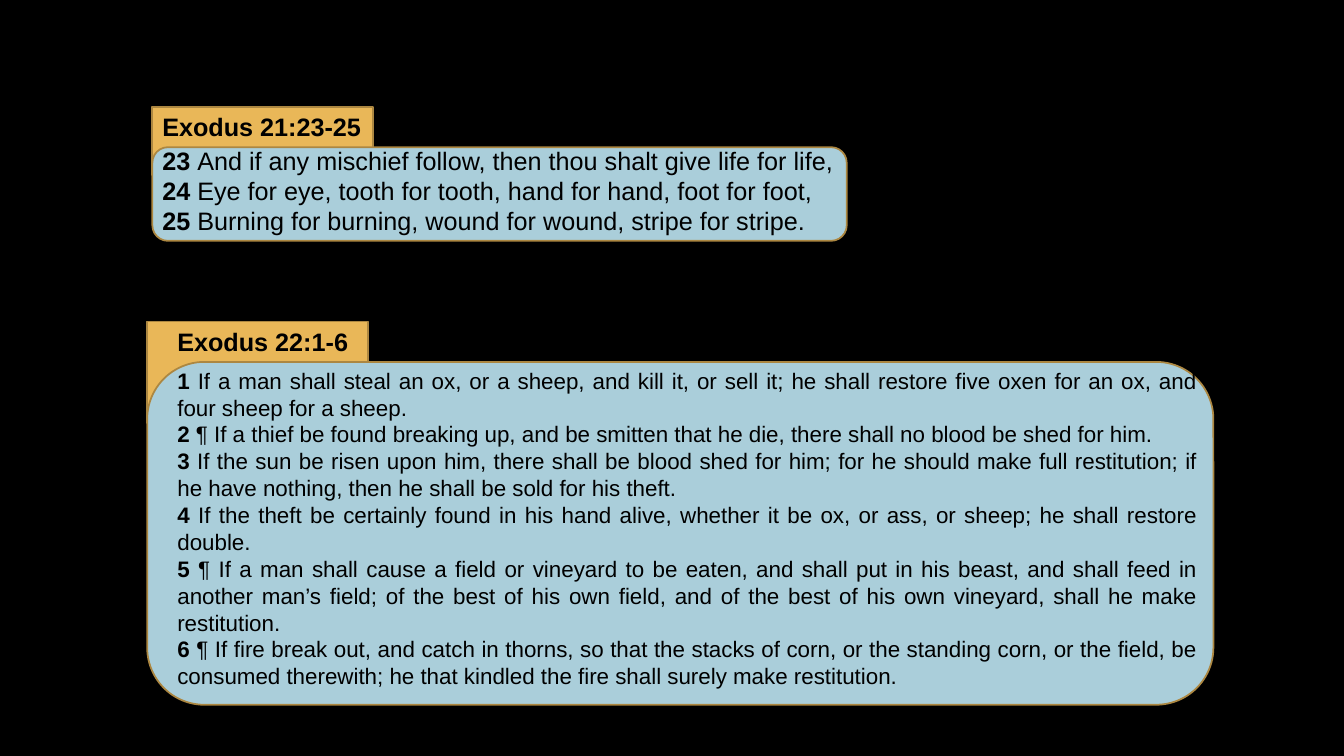
import pptx
import pptx.dml.color
import pptx.enum.shapes
import pptx.enum.text
import pptx.util

Cm = pptx.util.Cm
Pt = pptx.util.Pt
SHAPE = pptx.enum.shapes.MSO_SHAPE
ALIGN = pptx.enum.text.PP_ALIGN

COLOURS = {
    "background": "000000",
    "tab": "E9B758",
    "panel": "AACEDA",
    "outline": "AC8741",
    "text": "000000",
}
TAB_WIDTH, TAB_HEIGHT = 5.56, 1.02

# Boxes are left, top, width, height in centimetres; offsets are measured from them.
PASSAGES = [
    {
        "heading": "Exodus 22:1-6",
        "box": (3.71, 8.1, 26.87, 9.66),
        "tab_depth": 2.57,
        "indent": 0.51,
        "heading_width": 4.85,
        "verse_shift": 0,
        "verse_width": 26.21,
        "size": 16,
        "verses": [
            ("1", "If a man shall steal an ox, or a sheep, and kill it, or sell it; "
                  "he shall restore five oxen for an ox, and four sheep for a sheep."),
            ("2", "¶ If a thief be found breaking up, and be smitten that he die, "
                  "there shall no blood be shed for him."),
            ("3", "If the sun be risen upon him, there shall be blood shed for him; "
                  "for he should make full restitution; if he have nothing, "
                  "then he shall be sold for his theft."),
            ("4", "If the theft be certainly found in his hand alive, whether it be ox, "
                  "or ass, or sheep; he shall restore double."),
            ("5", "¶ If a man shall cause a field or vineyard to be eaten, and "
                  "shall put in his beast, and shall feed in another man’s field; "
                  "of the best of his own field, and of the best of his own vineyard, "
                  "shall he make restitution."),
            ("6", "¶ If fire break out, and catch in thorns, so that the stacks of corn, "
                  "or the standing corn, or the field, be consumed therewith; "
                  "he that kindled the fire shall surely make restitution."),
        ],
    },
    {
        "heading": "Exodus 21:23-25",
        "box": (3.84, 2.69, 17.5, 3.38),
        "tab_depth": 1.73,
        "indent": 0,
        "heading_width": 5.56,
        "verse_shift": -0.18,
        "verse_width": 17.86,
        "size": 18,
        "verses": [
            ("23", "And if any mischief follow, then thou shalt give life for life,"),
            ("24", "Eye for eye, tooth for tooth, hand for hand, foot for foot,"),
            ("25", "Burning for burning, wound for wound, stripe for stripe."),
        ],
    },
]


def colour(name):
    return pptx.dml.color.RGBColor.from_string(COLOURS[name])


def add_block(slide, kind, fill, *box):
    block = slide.shapes.add_shape(kind, *map(Cm, box))
    block.shadow.inherit = False
    block.fill.solid()
    block.fill.fore_color.rgb = colour(fill)
    block.line.color.rgb = colour("outline")
    block.line.width = Pt(1.25)


def add_text(slide, box, paragraphs, size, wrap, alignment):
    """Write paragraphs, each a list of (text, bold) runs, in a text box."""
    frame = slide.shapes.add_textbox(*map(Cm, box)).text_frame
    frame.word_wrap = wrap
    frame.auto_size = pptx.enum.text.MSO_AUTO_SIZE.SHAPE_TO_FIT_TEXT
    for number, runs in enumerate(paragraphs):
        paragraph = frame.add_paragraph() if number else frame.paragraphs[0]
        paragraph.alignment = alignment
        for words, bold in runs:
            run = paragraph.add_run()
            run.text = words
            style = {"name": "Arial", "size": Pt(size), "bold": bold}
            for attribute, value in style.items():
                setattr(run.font, attribute, value)
            run.font.color.rgb = colour("text")


def add_passage(slide, passage):
    """Place a tab with its heading and the panel of verses below it."""
    left, top, width, height = passage["box"]
    panel_top = top + TAB_HEIGHT
    panel_height = height - TAB_HEIGHT
    text_left = left + passage["indent"]
    shift = passage["verse_shift"]

    add_block(slide, SHAPE.RECTANGLE, "tab", left, top, TAB_WIDTH, passage["tab_depth"])
    add_block(slide, SHAPE.ROUNDED_RECTANGLE, "panel", left, panel_top, width, panel_height)
    add_text(slide, (text_left, top, passage["heading_width"], TAB_HEIGHT),
             [[(passage["heading"], True)]], 18, False, ALIGN.LEFT)
    verses = [[(number + " ", True), (words, False)] for number, words in passage["verses"]]
    add_text(slide, (text_left, panel_top + shift, passage["verse_width"], panel_height - shift),
             verses, passage["size"], True, ALIGN.JUSTIFY)


def main():
    presentation = pptx.Presentation()
    presentation.slide_width = Cm(33.87)
    presentation.slide_height = Cm(19.05)
    slide = presentation.slides.add_slide(presentation.slide_layouts[6])
    slide.background.fill.solid()
    slide.background.fill.fore_color.rgb = colour("background")
    for passage in PASSAGES:
        add_passage(slide, passage)
    presentation.save("out.pptx")


if __name__ == "__main__":
    main()
